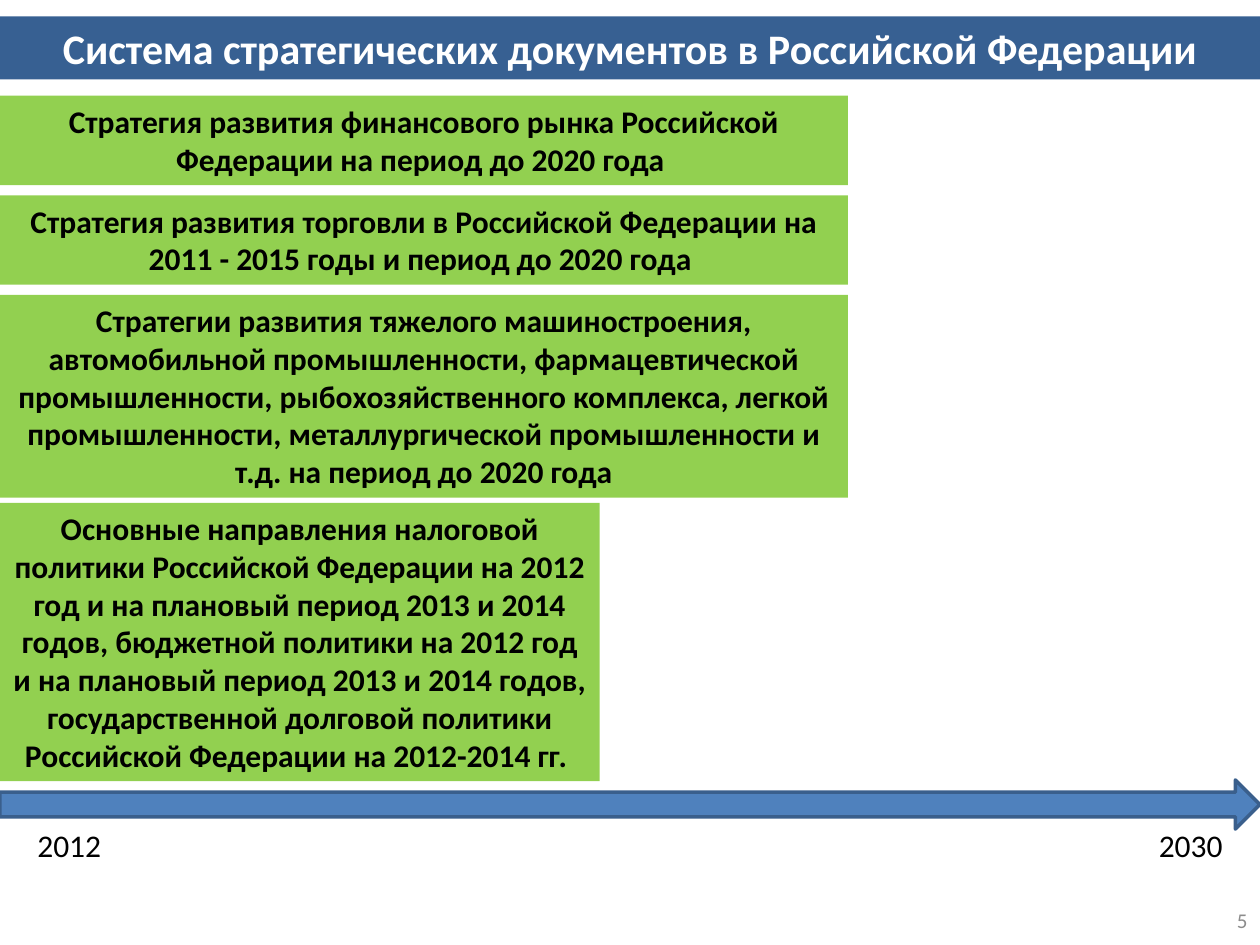
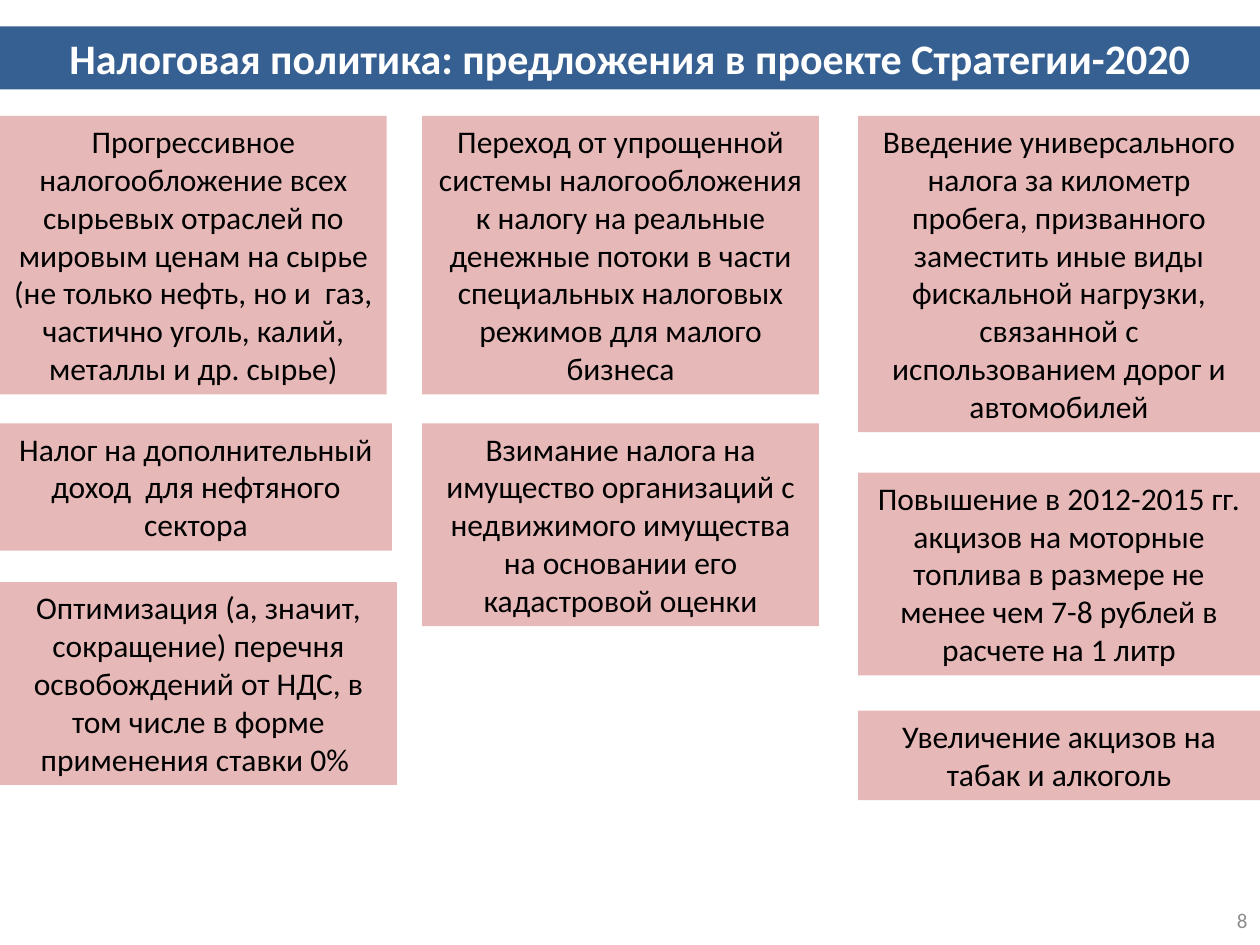
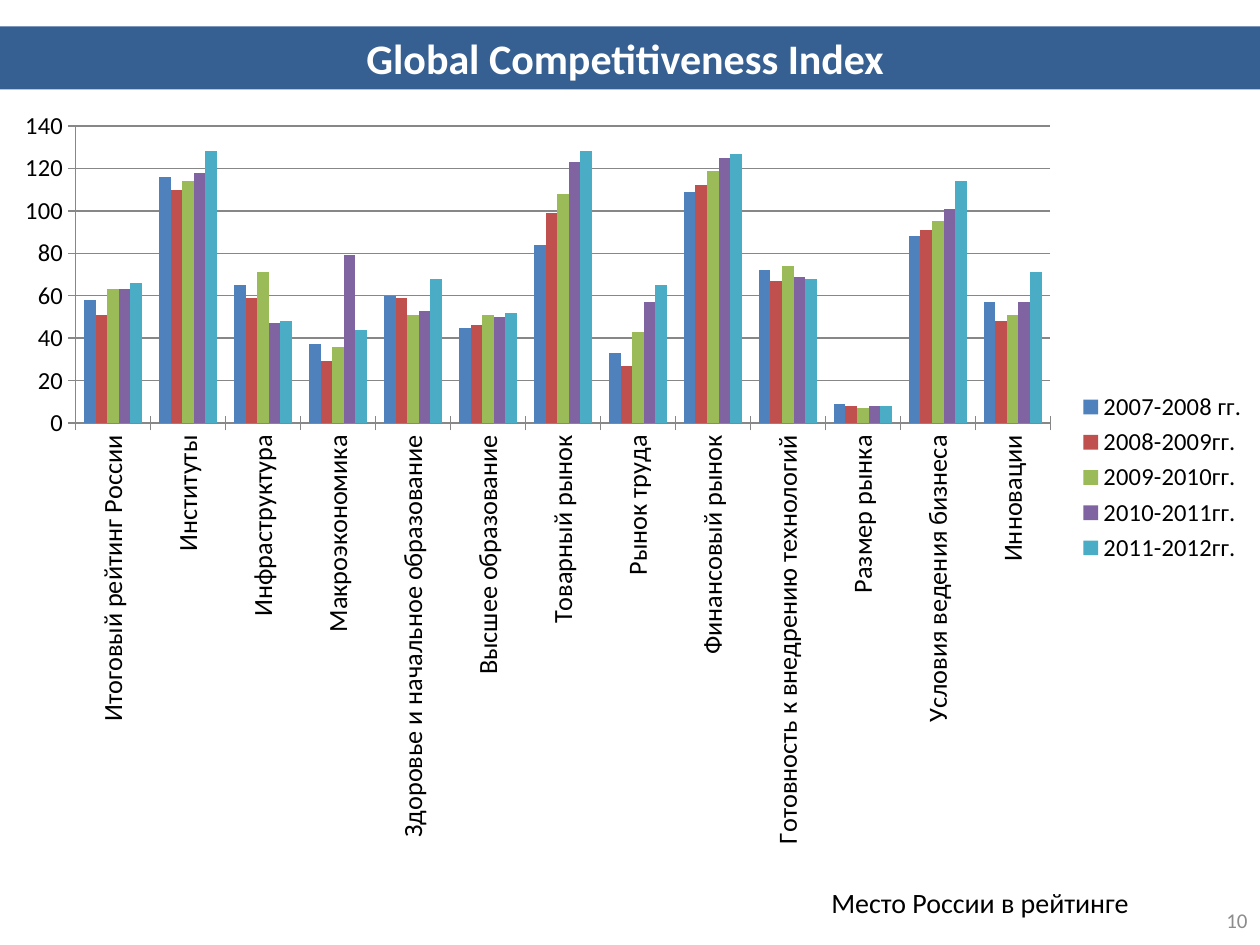
from pptx import Presentation
from pptx import util as u
from pptx.chart.data import CategoryChartData
from pptx.dml.color import RGBColor
from pptx.enum import chart as charts, shapes, text
from pptx.oxml.ns import qn

# Shared look
WIDTH, HEIGHT = 10, 7.5
FONT = "Calibri"
BAND = RGBColor(0x37, 0x60, 0x92)
GREEN = RGBColor(0x92, 0xD0, 0x50)
PINK = RGBColor(0xE6, 0xB9, 0xB8)
BLUE = RGBColor(0x4F, 0x81, 0xBD)
BLUE_EDGE = RGBColor(0x3A, 0x5F, 0x8C)
BLACK = RGBColor(0, 0, 0)
WHITE = RGBColor(0xFF, 0xFF, 0xFF)
GRAY = RGBColor(0x8C, 0x8C, 0x8C)
SERIES_COLORS = [BLUE, RGBColor(0xC0, 0x50, 0x4D), RGBColor(0x9B, 0xBB, 0x59),
                 RGBColor(0x80, 0x64, 0xA2), RGBColor(0x4B, 0xAC, 0xC6)]
LINE_HEIGHT, BOX_PADDING = 0.3, 0.11

LEFT, CENTER, RIGHT = text.PP_ALIGN.LEFT, text.PP_ALIGN.CENTER, text.PP_ALIGN.RIGHT
TITLE_FORMAT = {"size": u.Pt(24), "bold": True, "color": WHITE}
STRONG_FORMAT = {"size": u.Pt(18), "bold": True, "color": BLACK}
BODY_FORMAT = {"size": u.Pt(18), "bold": False, "color": BLACK}
CAPTION_FORMAT = {"size": u.Pt(16), "color": BLACK}
NUMBER_FORMAT = {"size": u.Pt(12), "color": GRAY}

# Stacks of boxes: left, top, then (gap above, width, text lines, wording)
STRATEGIES = [
    (0, 0.76, [
        (0, 6.73, 2, "Стратегия развития финансового рынка Российской Федерации "
                     "на период до 2020 года "),
        (0.08, 6.73, 2, "Стратегия развития торговли в Российской Федерации на "
                        "2011 - 2015 годы и период до 2020 года "),
        (0.08, 6.73, 5, "Стратегии развития тяжелого машиностроения, автомобильной "
                        "промышленности, фармацевтической промышленности, "
                        "рыбохозяйственного комплекса, легкой промышленности, "
                        "металлургической промышленности и т.д. на период до 2020 года"),
        (0.04, 4.76, 7, "Основные направления налоговой политики Российской Федерации "
                        "на 2012 год и на плановый период 2013 и 2014 годов, бюджетной "
                        "политики на 2012 год и на плановый период 2013 и 2014 годов, "
                        "государственной долговой политики Российской Федерации "
                        "на 2012-2014 гг. "),
    ]),
]
TIMELINE_YEARS = ["2012", "2030"]

PROPOSALS = [
    (0, 0.92, [
        (0, 3.07, 7, "Прогрессивное налогообложение всех сырьевых отраслей по мировым "
                     "ценам на сырье (не только нефть, но и  газ, частично уголь, "
                     "калий, металлы и др. сырье)"),
        (0.23, 3.11, 3, "Налог на дополнительный доход  для нефтяного сектора"),
        (0.25, 3.15, 5, "Оптимизация (а, значит, сокращение) перечня освобождений от "
                        "НДС, в том числе в форме применения ставки 0% "),
    ]),
    (3.35, 0.92, [
        (0, 3.15, 7, "Переход от упрощенной системы налогообложения к налогу на "
                     "реальные денежные потоки в части специальных налоговых режимов "
                     "для малого бизнеса"),
        (0.23, 3.15, 5, "Взимание налога на имущество организаций с недвижимого "
                        "имущества на основании его кадастровой оценки"),
    ]),
    (6.81, 0.92, [
        (0, 3.19, 8, "Введение универсального налога за километр пробега, призванного "
                     "заместить иные виды фискальной нагрузки, связанной с "
                     "использованием дорог и автомобилей"),
        (0.32, 3.19, 5, "Повышение в 2012-2015 гг. акцизов на моторные топлива в "
                        "размере не менее чем 7-8 рублей в расчете на 1 литр"),
        (0.28, 3.19, 2, "Увеличение акцизов на табак и алкоголь"),
    ]),
]

INDEX_CATEGORIES = [
    "Итоговый рейтинг России", "Институты", "Инфраструктура", "Макроэкономика",
    "Здоровье и начальное образование", "Высшее образование", "Товарный рынок",
    "Рынок труда", "Финансовый рынок", "Готовность к внедрению технологий",
    "Размер рынка", "Условия ведения бизнеса", "Инновации"]
INDEX_SERIES = {
    "2007-2008 гг.": [58, 116, 65, 37, 60, 45, 84, 33, 109, 72, 9, 88, 57],
    "2008-2009гг.": [51, 110, 59, 29, 59, 46, 99, 27, 112, 67, 8, 91, 48],
    "2009-2010гг.": [63, 114, 71, 36, 51, 51, 108, 43, 119, 74, 7, 95, 51],
    "2010-2011гг.": [63, 118, 47, 79, 53, 50, 123, 57, 125, 69, 8, 101, 57],
    "2011-2012гг.": [66, 128, 48, 44, 68, 52, 128, 65, 127, 68, 8, 114, 71],
}


def inches(*lengths):
    return [u.Inches(length) for length in lengths]


def format_font(font, values):
    font.name = FONT
    for name, value in values.items():
        if name == "color":
            font.color.rgb = value
        else:
            setattr(font, name, value)


def write(shape, wording, values, align=CENTER, anchor=text.MSO_ANCHOR.TOP):
    frame = shape.text_frame
    frame.word_wrap = True
    frame.auto_size = text.MSO_AUTO_SIZE.NONE
    frame.vertical_anchor = anchor
    paragraph = frame.paragraphs[0]
    paragraph.alignment = align
    run = paragraph.add_run()
    run.text = wording
    format_font(run.font, values)


def fill_shape(shape, color):
    shape.fill.solid()
    shape.fill.fore_color.rgb = color


def add_label(slide, box, wording, values, **layout):
    write(slide.shapes.add_textbox(*inches(*box)), wording, values, **layout)


def add_preset(slide, preset, box, color):
    shape = slide.shapes.add_shape(preset, *inches(*box))
    shape.shadow.inherit = False
    fill_shape(shape, color)
    shape.line.fill.background()
    return shape


def add_slide(presentation, title, number, band_top=0.21):
    """Add a slide with its title band and page number."""
    slide = presentation.slides.add_slide(presentation.slide_layouts[5])
    band = slide.shapes.title
    band.left, band.top, band.width, band.height = inches(0, band_top, WIDTH, 0.5)
    fill_shape(band, BAND)
    write(band, title, TITLE_FORMAT)
    add_label(slide, (7.67, 7.1, 2.33, 0.4), number, NUMBER_FORMAT,
              align=RIGHT, anchor=text.MSO_ANCHOR.MIDDLE)
    return slide


def add_stacks(slide, stacks, color, values):
    for left, top, boxes in stacks:
        for gap, width, lines, wording in boxes:
            top += gap
            height = lines * LINE_HEIGHT + BOX_PADDING
            box = add_preset(slide, shapes.MSO_SHAPE.RECTANGLE,
                             (left, top, width, height), color)
            write(box, wording, values)
            top += height


def add_timeline(slide):
    arrow = add_preset(slide, shapes.MSO_SHAPE.RIGHT_ARROW, (0, 6.19, WIDTH, 0.39), BLUE)
    arrow.line.color.rgb = BLUE_EDGE
    arrow.line.width = u.Pt(2)
    label_width = 1.1
    for year, left in zip(TIMELINE_YEARS, (0, WIDTH - label_width)):
        add_label(slide, (left, 6.51, label_width, 0.4), year, BODY_FORMAT)


def add_index_chart(slide):
    data = CategoryChartData()
    data.categories = INDEX_CATEGORIES
    for name, values in INDEX_SERIES.items():
        data.add_series(name, values)
    chart = slide.shapes.add_chart(charts.XL_CHART_TYPE.COLUMN_CLUSTERED,
                                   *inches(0, 0.76, WIDTH, 6.06), data).chart
    chart.has_title = False
    format_font(chart.font, {"size": u.Pt(10), "color": BLACK})

    plot = chart.plots[0]
    plot.vary_by_categories = False
    plot.gap_width = 150
    for series, color in zip(plot.series, SERIES_COLORS):
        fill_shape(series.format, color)

    chart.has_legend = True
    chart.legend.position = charts.XL_LEGEND_POSITION.RIGHT
    chart.legend.include_in_layout = False
    format_font(chart.legend.font, {"size": u.Pt(14), "color": BLACK})
    for axis, size in ((chart.category_axis, 15), (chart.value_axis, 14)):
        axis.major_tick_mark = charts.XL_TICK_MARK.CROSS
        format_font(axis.tick_labels.font, {"size": u.Pt(size), "color": BLACK})
    chart.value_axis.has_major_gridlines = True

    # Category names read upwards
    label_body = chart.element.find(
        ".//" + "/".join(qn(tag) for tag in ("c:catAx", "c:txPr", "a:bodyPr")))
    label_body.set("rot", "-5400000")
    label_body.set("vert", "horz")


def main():
    presentation = Presentation()
    presentation.slide_width, presentation.slide_height = inches(WIDTH, HEIGHT)

    # Strategic documents on a timeline
    slide = add_slide(presentation, "Система стратегических документов в Российской Федерации",
                      "5", band_top=0.13)
    add_timeline(slide)
    add_stacks(slide, STRATEGIES, GREEN, STRONG_FORMAT)

    # Tax policy proposals
    slide = add_slide(presentation, "Налоговая политика: предложения в проекте Стратегии-2020", "8")
    add_stacks(slide, PROPOSALS, PINK, BODY_FORMAT)

    # Competitiveness ranking
    slide = add_slide(presentation, "Global Competitiveness Index ", "10")
    add_index_chart(slide)
    add_label(slide, (6.5, 6.98, 2.6, 0.37), "Место России в рейтинге",
              CAPTION_FORMAT, align=LEFT)

    presentation.save("out.pptx")


if __name__ == "__main__":
    main()
